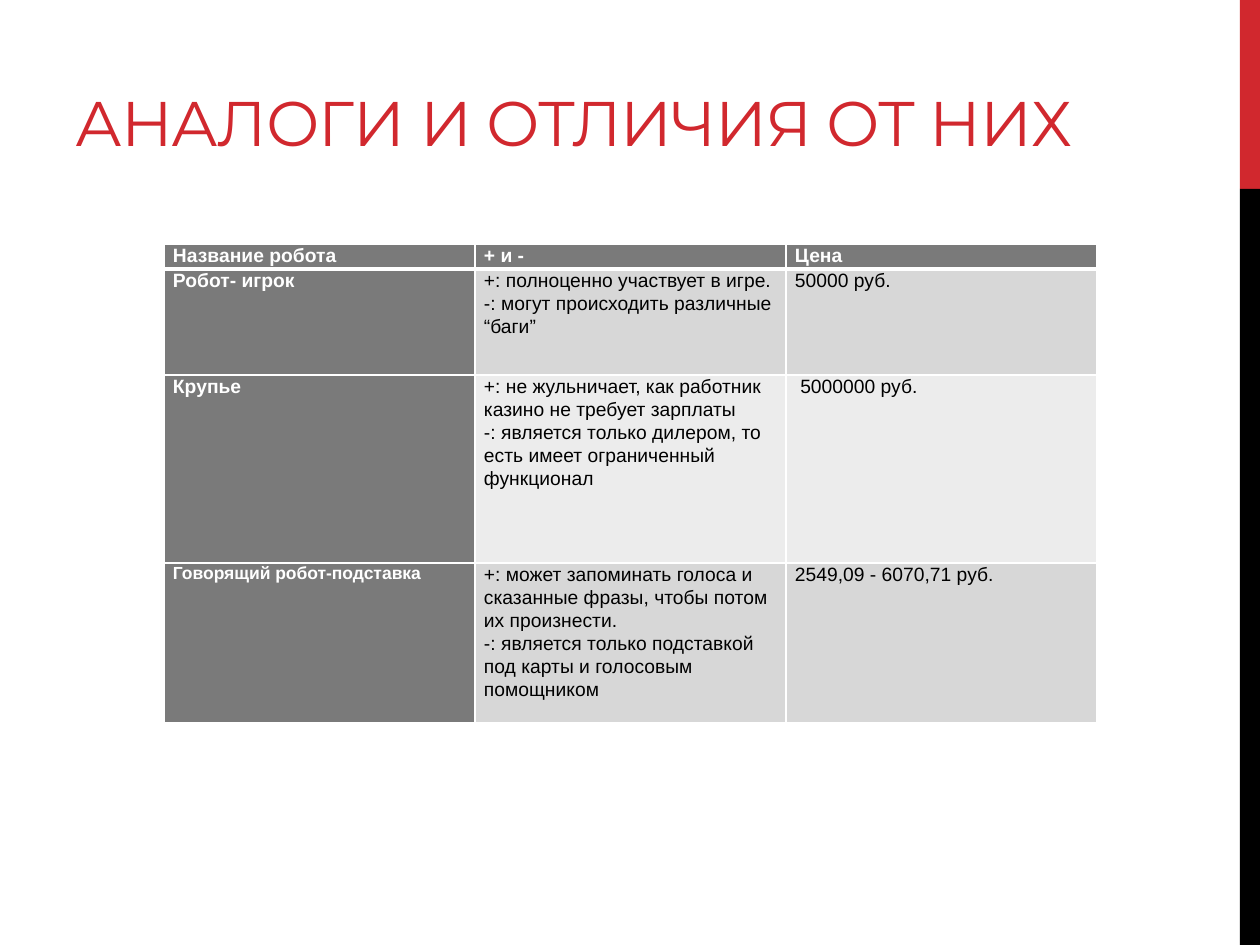
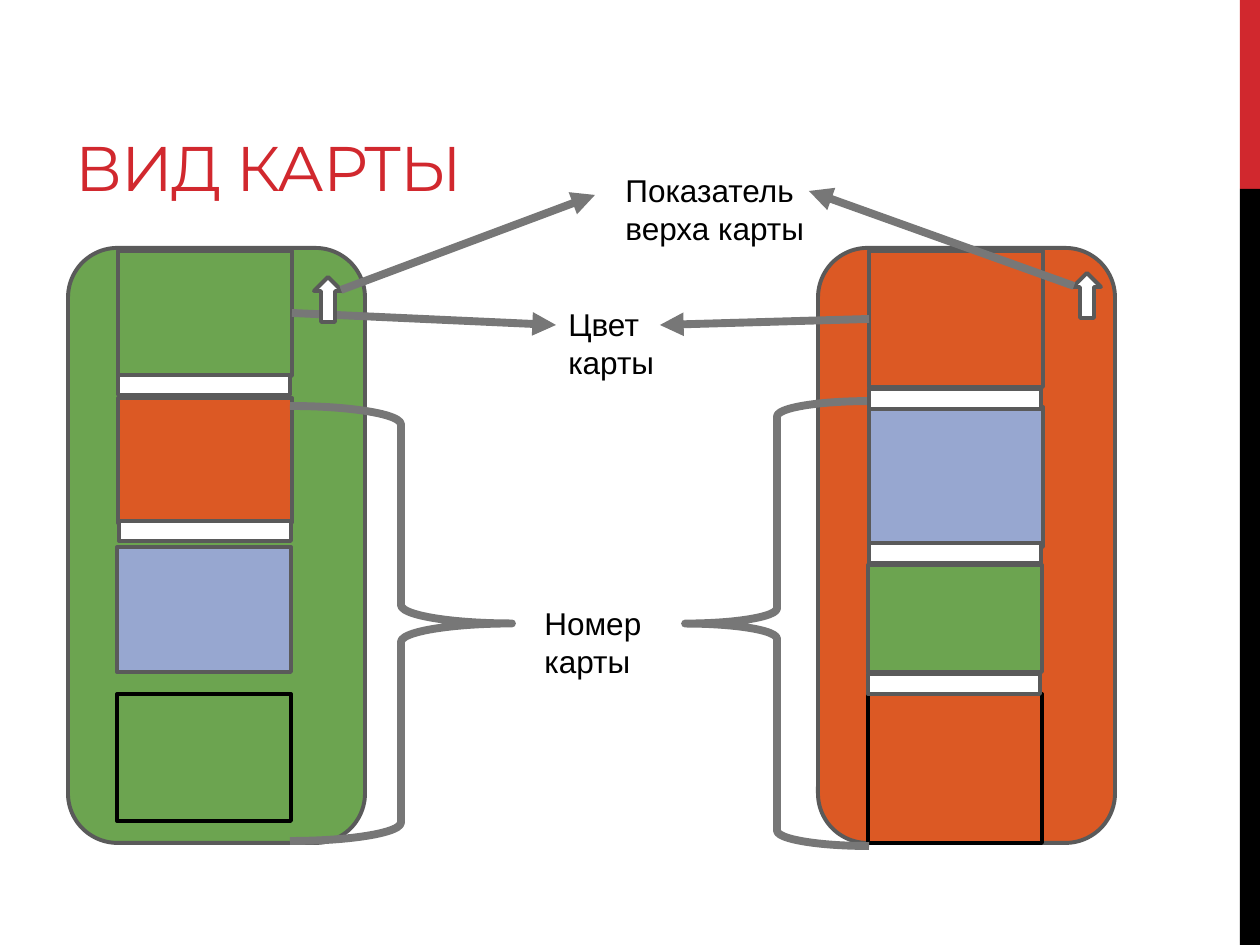
from pptx import Presentation, util as u
from pptx.dml.color import RGBColor
from pptx.enum import shapes, text
from pptx.oxml import parse_xml
from pptx.oxml.ns import nsdecls, qn

PX = 914400 // 126
W, H = 1260, 945
RED, BLACK, WHITE = "D1282E", "000000", "FFFFFF"
GREEN, ORANGE, BLUE = "6CA450", "DC5924", "97A7D0"
OUTLINE, POINTER = "5A5A5A", "777777"
HEAD, BAND, PALE = "7A7A7A", "D7D7D7", "ECECEC"
MSO = shapes.MSO_SHAPE


def rgb(value):
    return RGBColor.from_string(value)


def add_shape(s, kind, box, fill=None, line=None, width=2.25):
    sp = s.shapes.add_shape(kind, *[v * PX for v in box])
    sp.shadow.inherit = False
    if fill:
        sp.fill.solid()
        sp.fill.fore_color.rgb = rgb(fill)
    else:
        sp.fill.background()
    if line:
        sp.line.color.rgb = rgb(line)
        sp.line.width = u.Pt(width)
    else:
        sp.line.fill.background()
    return sp


prs = Presentation()
prs.slide_width, prs.slide_height = u.Inches(10), u.Inches(7.5)

slides = []
for title, box in [
    ("АНАЛОГИ И ОТЛИЧИЯ ОТ НИХ", (63, 21, 1133, 144)),
    ("ВИД КАРТЫ", (63, 21, 798, 189)),
]:
    s = prs.slides.add_slide(prs.slide_layouts[6])
    slides.append(s)
    add_shape(s, MSO.RECTANGLE, (1240, 0, 20, 189), RED)
    add_shape(s, MSO.RECTANGLE, (1240, 189, 20, H - 189), BLACK)
    tf = s.shapes.add_textbox(*[v * PX for v in box]).text_frame
    tf.word_wrap = True
    tf.vertical_anchor = text.MSO_ANCHOR.BOTTOM
    tf.text = title
    r = tf.paragraphs[0].runs[0]
    r.font.name, r.font.size = "Montserrat", u.Pt(36)
    r.font.color.rgb = rgb(RED)
    r._r.get_or_add_rPr().set("spc", "-60")

analogs, cards = slides

rows = [
    (25, HEAD, ["Название робота", "+ и -", "Цена"]),
    (106, BAND, [
        "Робот- игрок",
        "+: полноценно участвует в игре.\n-: могут происходить различные “баги”",
        "50000 руб.",
    ]),
    (188, PALE, [
        "Крупье",
        "+: не жульничает, как работник казино не требует зарплаты\n"
        "-: является только дилером, то есть имеет ограниченный функционал",
        "\u00a05000000 руб.",
    ]),
    (160, BAND, [
        "Говорящий робот-подставка",
        "+: может запоминать голоса и сказанные фразы, чтобы потом их произнести.\n"
        "-: является только подставкой под карты и голосовым помощником",
        "2549,09 - 6070,71 руб.",
    ]),
]
table = analogs.shapes.add_table(
    4, 3, 164 * PX, 244 * PX, 933 * PX, sum(row[0] for row in rows) * PX
).table
for col in table.columns:
    col.width = 311 * PX
for i, (height, fill, words) in enumerate(rows):
    table.rows[i].height = height * PX
    for j, word in enumerate(words):
        heading = i == 0 or j == 0
        cell = table.cell(i, j)
        cell.margin_left = cell.margin_right = 9 * PX
        cell.margin_top = cell.margin_bottom = 0
        cell.fill.solid()
        cell.fill.fore_color.rgb = rgb(HEAD if heading else fill)
        cell.text_frame.text = word
        for p in cell.text_frame.paragraphs:
            p.line_spacing = 1.07
            for r in p.runs:
                r.font.name = "Arial"
                r.font.size = u.Pt(10 if (i, j) == (3, 0) else 11)
                r.font.bold = heading
                r.font.color.rgb = rgb(WHITE if heading else BLACK)
        tcPr = cell._tc.get_or_add_tcPr()
        for k, side in enumerate("LRTB"):
            thick = (i, side) in [(0, "B"), (1, "T")]
            tcPr.insert(k, parse_xml(
                f'<a:ln{side} {nsdecls("a")} w="{u.Pt(3 if thick else 1)}">'
                f'<a:solidFill><a:srgbClr val="{WHITE}"/></a:solidFill></a:ln{side}>'
            ))

for left, colour, blocks in [
    (68, GREEN, [
        (118, 251, 125, GREEN), (118, 398, 125, ORANGE),
        (117, 547, 125, BLUE), (117, 694, 127, GREEN),
    ]),
    (818, ORANGE, [
        (869, 251, 136, ORANGE), (869, 407, 140, BLUE),
        (868, 565, 107, GREEN), (868, 694, 149, ORANGE),
    ]),
]:
    add_shape(cards, MSO.ROUNDED_RECTANGLE, (left, 248, 297, 595), colour, OUTLINE)
    for x, y, height, fill in blocks:
        line = BLACK if y == 694 else OUTLINE
        add_shape(cards, MSO.RECTANGLE, (x, y, 174, height), fill, line)

for box, turn in [((290, 406, 222, 435), 0), ((685, 401, 184, 445), 180)]:
    add_shape(cards, MSO.RIGHT_BRACE, box, line=POINTER, width=4.5).rotation = turn

for x, y in [(118, 375), (868, 674), (119, 521), (869, 389), (869, 543)]:
    add_shape(cards, MSO.RECTANGLE, (x, y, 172, 20), WHITE, OUTLINE)

pointers = [
    (292, 313, 556, 325), (869, 319, 660, 325),
    (341, 290, 595, 195), (1074, 286, 809, 191),
]
for n, ends in enumerate(pointers):
    if n == 2:
        for x, y in [(314, 277), (1073, 273)]:
            add_shape(cards, MSO.DOWN_ARROW, (x, y, 28, 45), WHITE, OUTLINE).rotation = 180
    c = cards.shapes.add_connector(
        shapes.MSO_CONNECTOR.STRAIGHT, *[v * PX for v in ends]
    )
    c.line.color.rgb = rgb(POINTER)
    c.line.width = u.Pt(4.5)
    ln = c.line._get_or_add_ln()
    ln.append(ln.makeelement(qn("a:tailEnd"), {"type": "triangle"}))
    spPr = c._element.spPr
    spPr.append(spPr.makeelement(qn("a:effectLst"), {}))

for label, x, y, width in [
    ("Номер карты", 532, 598, 168),
    ("Цвет карты", 556, 299, 115),
    ("Показатель верха карты", 613, 165, 221),
]:
    tf = cards.shapes.add_textbox(x * PX, y * PX, width * PX, 89 * PX).text_frame
    tf.word_wrap = True
    tf.text = label
    r = tf.paragraphs[0].runs[0]
    r.font.name, r.font.size = "Arial", u.Pt(18)
    r.font.color.rgb = rgb(BLACK)

prs.save("out.pptx")
